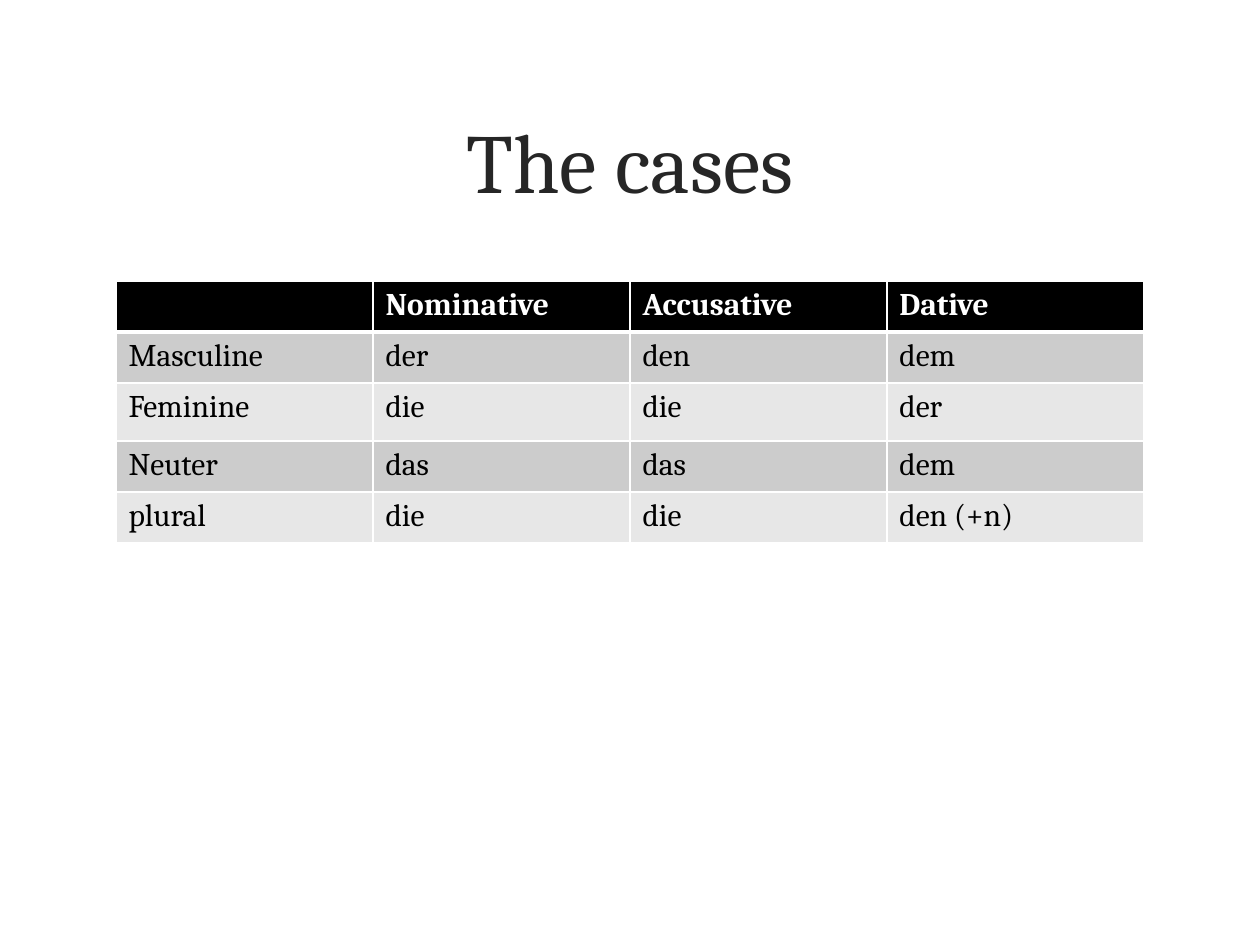
"""Build a slide with a table of German definite articles by case."""
from lxml import etree
from pptx import Presentation, util as u
from pptx.dml.color import RGBColor
from pptx.enum import text
from pptx.oxml import ns

TITLE = "The cases"
ROWS = [
    ("", "Nominative", "Accusative", "Dative"),
    ("Masculine", "der", "den", "dem"),
    ("Feminine", "die", "die", "der"),
    ("Neuter", "das", "das", "dem"),
    ("plural", "die", "die", "den (+n)"),
]
ROW_HEIGHTS = [51, 51, 58, 51, 51]
COLUMN_WIDTH = 257
TITLE_BOX = (76, 60, 1108, 199)
TABLE_ORIGIN = (116, 281)
COLORS = {"title": "262626", "header": "000000", "odd": "CCCCCC",
          "even": "E7E7E7", "light": "FFFFFF", "dark": "000000"}
FONT = "Cambria"
PX = u.Inches(1) / 126


def px(value):
    return u.Emu(round(value * PX))


def add_text(paragraph, content, size, color, bold=False):
    run = paragraph.add_run()
    run.text = content
    run.font.name = FONT
    run.font.size = u.Pt(size)
    run.font.bold = bold
    run.font.color.rgb = RGBColor.from_string(COLORS[color])


def set_borders(cell, widths):
    properties = cell._tc.get_or_add_tcPr()
    for side, width in widths.items():
        line = etree.SubElement(properties, ns.qn(f"a:ln{side}"), w=str(u.Pt(width)))
        fill = etree.SubElement(line, ns.qn("a:solidFill"))
        etree.SubElement(fill, ns.qn("a:srgbClr"), val=COLORS["light"])


def add_title(slide):
    frame = slide.shapes.add_textbox(*map(px, TITLE_BOX)).text_frame
    frame.word_wrap = True
    frame.vertical_anchor = text.MSO_ANCHOR.MIDDLE
    paragraph = frame.paragraphs[0]
    paragraph.alignment = text.PP_ALIGN.CENTER
    add_text(paragraph, TITLE, 48, "title")


def add_case_table(slide):
    columns = len(ROWS[0])
    size = (columns * COLUMN_WIDTH, sum(ROW_HEIGHTS))
    table = slide.shapes.add_table(
        len(ROWS), columns, *map(px, TABLE_ORIGIN + size)).table
    for column in table.columns:
        column.width = px(COLUMN_WIDTH)
    for index, (words, height) in enumerate(zip(ROWS, ROW_HEIGHTS)):
        table.rows[index].height = px(height)
        header = index == 0
        fill = "header" if header else "odd" if index % 2 else "even"
        widths = {"L": 1, "R": 1, "T": 3 if index == 1 else 1, "B": 3 if header else 1}
        for cell, word in zip(table.rows[index].cells, words):
            set_borders(cell, widths)
            cell.fill.solid()
            cell.fill.fore_color.rgb = RGBColor.from_string(COLORS[fill])
            if word:
                add_text(cell.text_frame.paragraphs[0], word, 18,
                         "light" if header else "dark", header)


def main():
    presentation = Presentation()
    presentation.slide_width = px(1260)
    presentation.slide_height = px(945)
    slide = presentation.slides.add_slide(presentation.slide_layouts[6])
    add_title(slide)
    add_case_table(slide)
    presentation.save("out.pptx")


if __name__ == "__main__":
    main()
